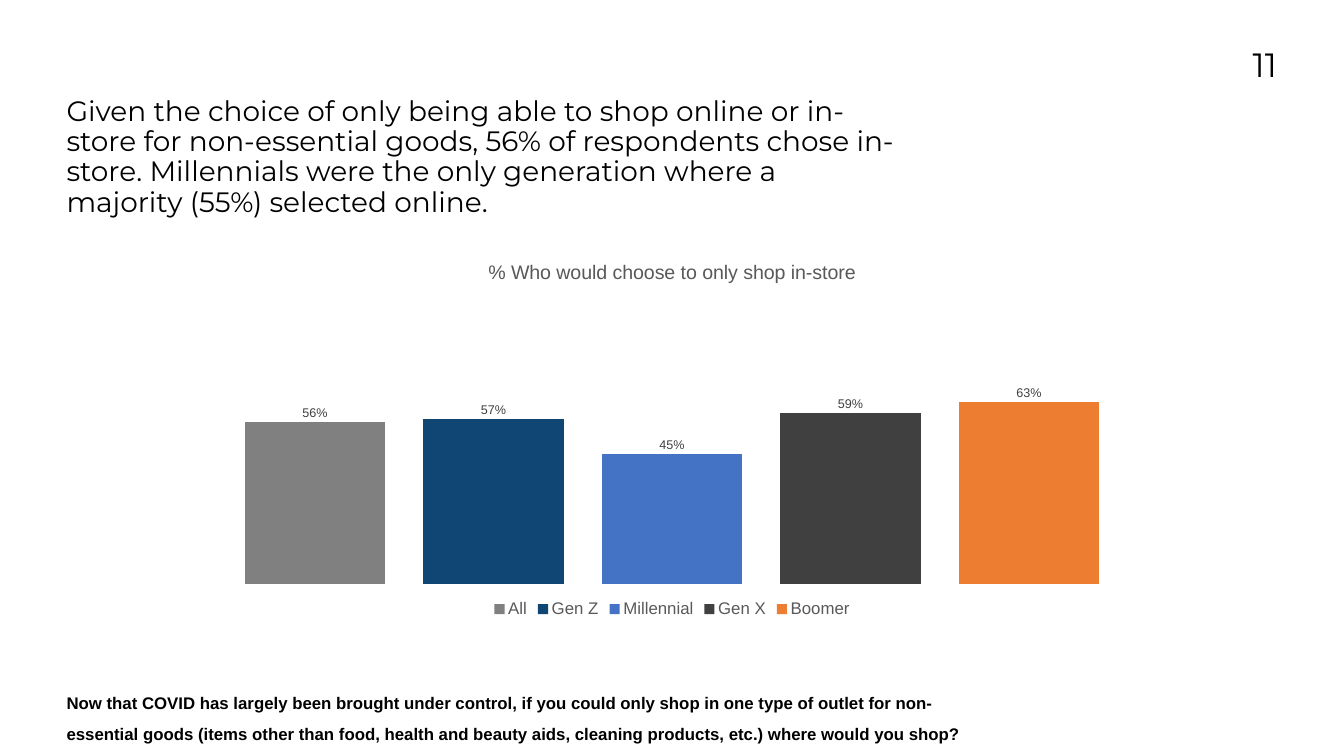
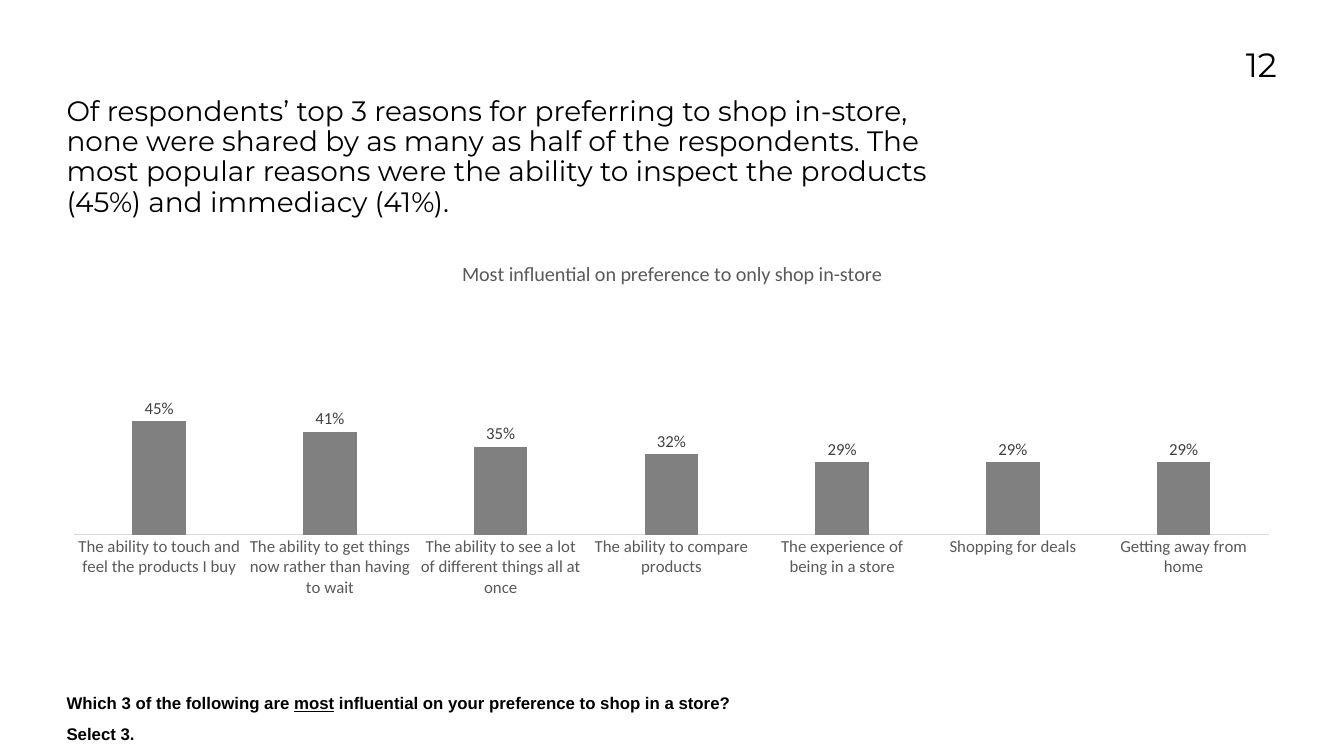
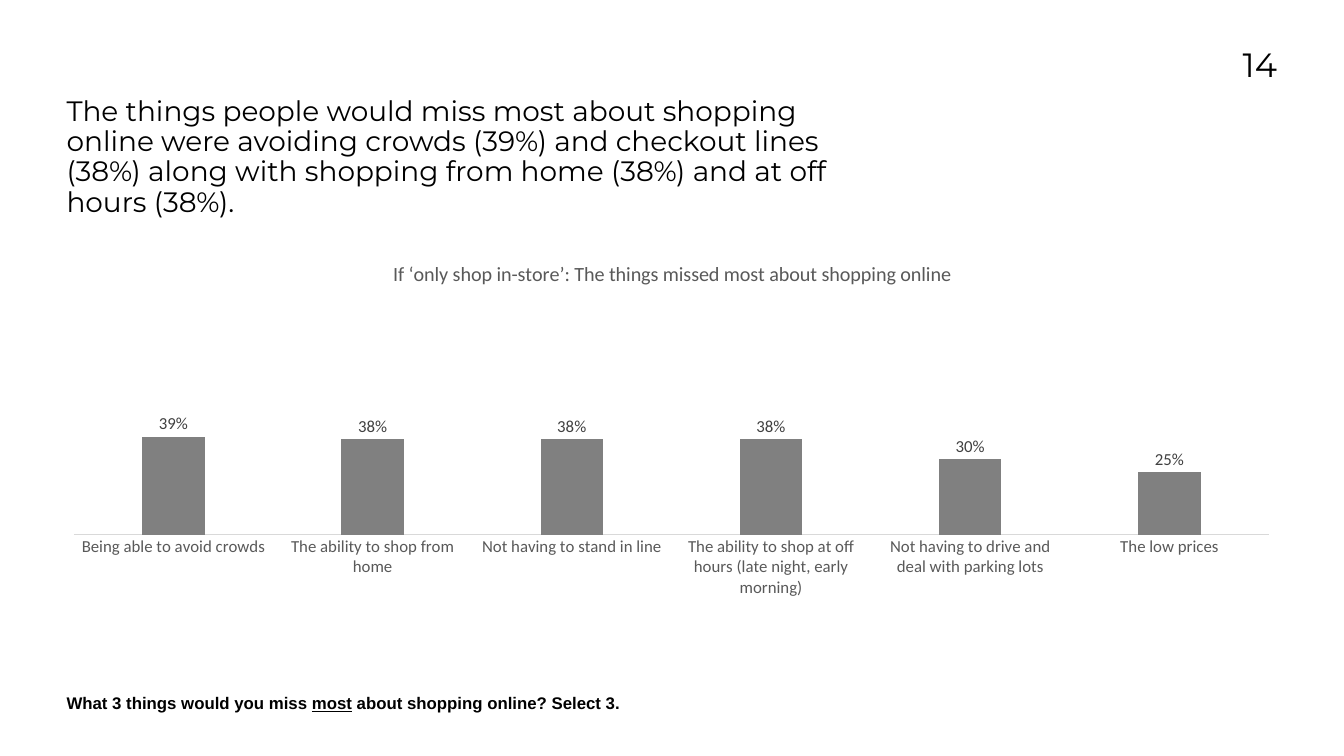
from dataclasses import dataclass

from lxml import etree
from pptx import Presentation
from pptx.chart.data import CategoryChartData
from pptx.dml.color import RGBColor
from pptx.enum.chart import (XL_CHART_TYPE, XL_LABEL_POSITION,
                             XL_LEGEND_POSITION, XL_TICK_MARK)
from pptx.enum.text import MSO_ANCHOR, PP_ALIGN
from pptx.oxml.ns import qn
from pptx.util import Inches, Pt

COLUMN = XL_CHART_TYPE.COLUMN_CLUSTERED
OUTSIDE = XL_LABEL_POSITION.OUTSIDE_END
BOTTOM = XL_LEGEND_POSITION.BOTTOM
NO_TICK = XL_TICK_MARK.NONE
TOP = MSO_ANCHOR.TOP
LEFT, RIGHT = PP_ALIGN.LEFT, PP_ALIGN.RIGHT


# Theme: colours, fonts and type sizes
@dataclass(frozen=True)
class Theme:
    black: str = "000000"
    gray: str = "808080"
    navy: str = "104674"
    blue: str = "4472C4"
    dark: str = "404040"
    orange: str = "ED7D31"
    muted: str = "595959"
    rule: str = "D9D9D9"
    head: str = "Montserrat"
    plain: str = "Arial"
    chart: str = "Calibri"
    page_size: float = 48
    head_size: float = 40
    note_size: float = 24
    text_size: float = 24
    small_size: float = 18


THEME = Theme()
EDGE = 1.32
WIDTH = 24.03


@dataclass(frozen=True)
class Style:
    name: str
    size: float
    color: str = THEME.black
    bold: bool = False


@dataclass(frozen=True)
class Box:
    left: float
    top: float
    width: float
    height: float

    def inches(self) -> list:
        return [Inches(v) for v in (self.left, self.top, self.width, self.height)]


@dataclass(frozen=True)
class Bar:
    name: str
    values: tuple
    color: str = THEME.gray


@dataclass(frozen=True)
class Graph:
    title: str
    groups: tuple
    bars: tuple
    title_style: Style = Style(THEME.chart, 28.8, THEME.muted)
    label_style: Style = Style(THEME.chart, THEME.text_size, THEME.dark)
    frame: tuple = (0.006, 0.099, 0.987, 0.669)
    legend: bool = False


@dataclass(frozen=True)
class Page:
    number: int
    head: str
    head_width: float
    graph: Graph
    note: tuple  # every second part is underlined
    note_width: float = 13.7


PAGE_STYLE = Style(THEME.head, THEME.page_size)
HEAD_STYLE = Style(THEME.head, THEME.head_size)
NOTE_STYLE = Style(THEME.plain, THEME.note_size, bold=True)
AXIS_STYLE = Style(THEME.chart, THEME.text_size, THEME.muted)
KEY_STYLE = Style(THEME.plain, THEME.text_size, THEME.muted)

# Content
PAGES = (
    Page(
        11,
        "Given the choice of only being able to shop online or in-store for "
        "non-essential goods, 56% of respondents chose in-store. Millennials "
        "were the only generation where a majority (55%) selected online.",
        16.47,
        Graph(
            "% Who would choose to only shop in-store",
            ("1",),
            (Bar("All", (0.56,)),
             Bar("Gen Z", (0.57,), THEME.navy),
             Bar("Millennial", (0.45,), THEME.blue),
             Bar("Gen X", (0.59,), THEME.dark),
             Bar("Boomer", (0.63,), THEME.orange)),
            Style(THEME.plain, 28, THEME.muted),
            Style(THEME.plain, THEME.small_size, THEME.dark),
            (0.02, 0.13, 0.96, 0.77),
            legend=True,
        ),
        ("Now that COVID has largely been brought under control, if you could "
         "only shop in one type of outlet for non-essential goods (items other "
         "than food, health and beauty aids, cleaning products, etc.) where "
         "would you shop?",),
        18.56,
    ),
    Page(
        12,
        "Of respondents’ top 3 reasons for preferring to shop in-store, none "
        "were shared by as many as half of the respondents. The most popular "
        "reasons were the ability to inspect the products (45%) and immediacy "
        "(41%).",
        17.08,
        Graph(
            "Most influential on preference to only shop in-store",
            ("The ability to touch and feel the products I buy",
             "The ability to get things now rather than having to wait",
             "The ability to see a lot of different things all at once",
             "The ability to compare products",
             "The experience of being in a store",
             "Shopping for deals",
             "Getting away from home"),
            (Bar("Series 1", (0.45, 0.41, 0.35, 0.32, 0.29, 0.29, 0.29)),),
        ),
        ("Which 3 of the following are ", "most",
         " influential on your preference to shop in a store? Select 3."),
    ),
    Page(
        14,
        "The things people would miss most about shopping online were avoiding "
        "crowds (39%) and checkout lines (38%) along with shopping from home "
        "(38%) and at off hours (38%).",
        16.01,
        Graph(
            "If ‘only shop in-store’: The things missed most about shopping online",
            ("Being able to avoid crowds",
             "The ability to shop from home",
             "Not having to stand in line",
             "The ability to shop at off hours (late night, early morning)",
             "Not having to drive and deal with parking lots",
             "The low prices"),
            (Bar("Series 1", (0.39, 0.38, 0.38, 0.38, 0.3, 0.25)),),
        ),
        ("What 3 things would you miss ", "most",
         " about shopping online? Select 3."),
    ),
)


def apply(target, values: dict) -> None:
    for name, value in values.items():
        setattr(target, name, value)


def set_font(font, style: Style) -> None:
    apply(font, {"name": style.name, "size": Pt(style.size), "bold": style.bold})
    font.color.rgb = RGBColor.from_string(style.color)


def add_text(slide, box: Box, parts: tuple, style: Style,
             space: float = 1.0, align=LEFT) -> None:
    frame = slide.shapes.add_textbox(*box.inches()).text_frame
    apply(frame, {"word_wrap": True, "vertical_anchor": TOP,
                  "margin_left": 0, "margin_right": 0,
                  "margin_top": 0, "margin_bottom": 0})
    line = frame.paragraphs[0]
    apply(line, {"alignment": align, "line_spacing": space})
    for index, part in enumerate(parts):
        run = line.add_run()
        run.text = part
        set_font(run.font, style)
        if index % 2:
            run.font.underline = True


def place_plot(chart, frame: tuple) -> None:
    """Fix the inner plot area as shares of the chart."""
    area = chart.element.find(f".//{qn('c:plotArea')}")
    for old in area.findall(qn("c:layout")):
        area.remove(old)
    layout = etree.Element(qn("c:layout"))
    area.insert(0, layout)
    manual = etree.SubElement(layout, qn("c:manualLayout"))
    values = {"layoutTarget": "inner", "xMode": "edge", "yMode": "edge",
              **dict(zip("xywh", frame))}
    for tag, value in values.items():
        etree.SubElement(manual, qn(f"c:{tag}")).set("val", str(value))


def add_graph(slide, box: Box, graph: Graph) -> None:
    data = CategoryChartData(number_format="0%")
    data.categories = graph.groups
    for bar in graph.bars:
        data.add_series(bar.name, bar.values)
    chart = slide.shapes.add_chart(COLUMN, *box.inches(), data).chart
    set_font(chart.font, Style(THEME.chart, THEME.text_size))

    # Title and legend
    chart.has_title = True
    title = chart.chart_title.text_frame
    title.text = graph.title
    set_font(title.paragraphs[0].runs[0].font, graph.title_style)
    chart.has_legend = graph.legend
    if graph.legend:
        apply(chart.legend, {"position": BOTTOM, "include_in_layout": False})
        set_font(chart.legend.font, KEY_STYLE)

    # Axes
    apply(chart.value_axis, {"minimum_scale": 0, "maximum_scale": 1,
                             "has_major_gridlines": False, "visible": False})
    axis = chart.category_axis
    apply(axis, {"major_tick_mark": NO_TICK, "minor_tick_mark": NO_TICK,
                 "visible": not graph.legend})
    set_font(axis.tick_labels.font, AXIS_STYLE)
    axis.format.line.width = Pt(0.75)
    axis.format.line.color.rgb = RGBColor.from_string(THEME.rule)

    # Columns and their labels
    plot = chart.plots[0]
    apply(plot, {"gap_width": 219, "overlap": -27, "vary_by_categories": False})
    for bar, series in zip(graph.bars, plot.series):
        series.format.fill.solid()
        series.format.fill.fore_color.rgb = RGBColor.from_string(bar.color)
        labels = series.data_labels
        apply(labels, {"show_value": True, "position": OUTSIDE,
                       "number_format": "0%", "number_format_is_linked": False})
        set_font(labels.font, graph.label_style)
    place_plot(chart, graph.frame)


def add_page(deck, page: Page) -> None:
    slide = deck.slides.add_slide(deck.slide_layouts[6])
    add_text(slide, Box(23.09, 0.88, 2.25, 1.64), (str(page.number),),
             PAGE_STYLE, align=RIGHT)
    add_graph(slide, Box(EDGE, 4.88, WIDTH, 7.46), page.graph)
    add_text(slide, Box(EDGE, 1.93, page.head_width, 2.08), (page.head,),
             HEAD_STYLE, 0.9)
    add_text(slide, Box(EDGE, 13.55, page.note_width, 0.65), page.note,
             NOTE_STYLE, 1.5)


def main() -> None:
    deck = Presentation()
    apply(deck, {"slide_width": Inches(26.67), "slide_height": Inches(15)})
    for page in PAGES:
        add_page(deck, page)
    deck.save("out.pptx")


if __name__ == "__main__":
    main()
